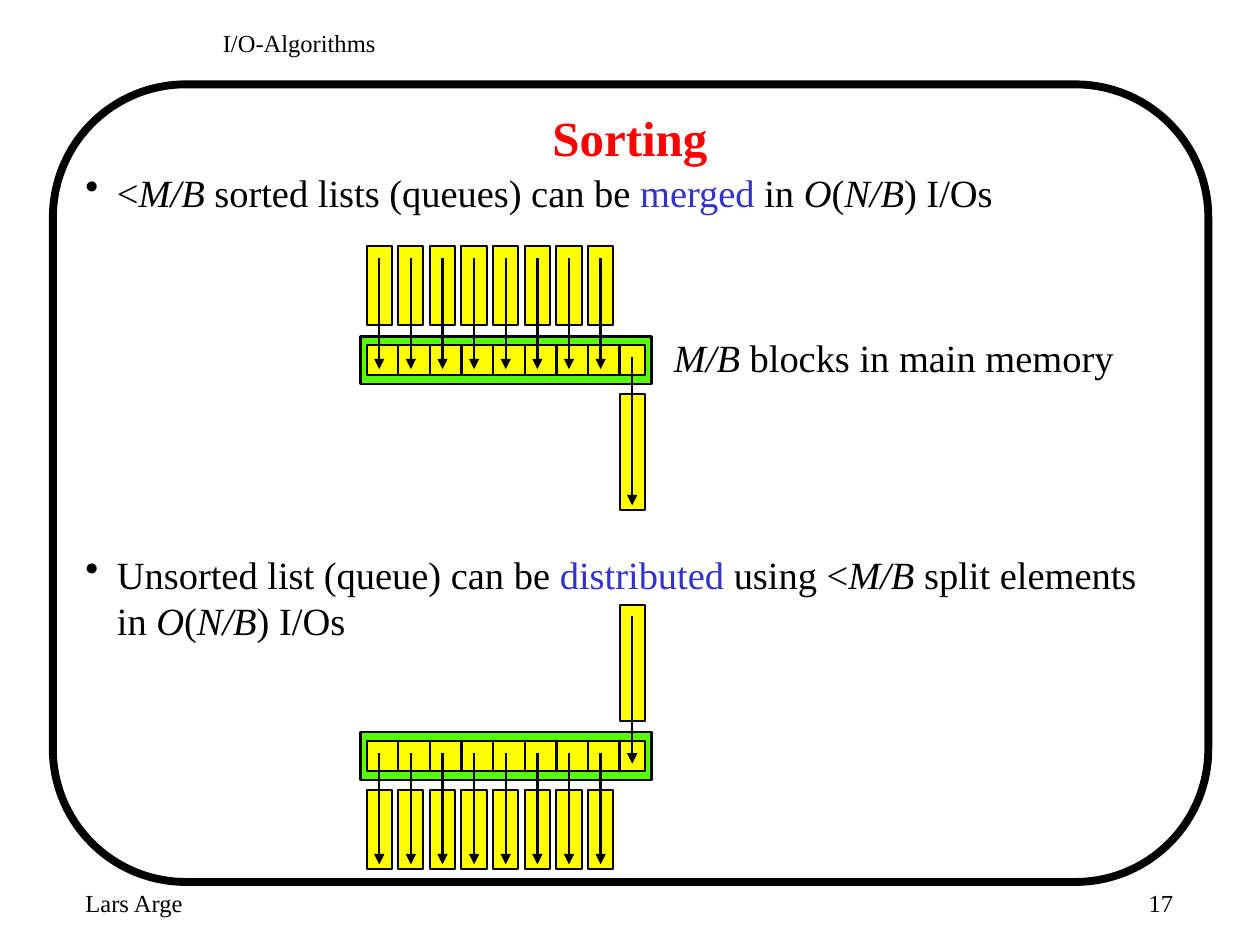
from pptx import Presentation
from pptx.dml.color import RGBColor
from pptx.enum.shapes import MSO_CONNECTOR, MSO_SHAPE
from pptx.enum.text import MSO_ANCHOR, PP_ALIGN
from pptx.oxml.ns import qn
from pptx.util import Inches, Pt
from lxml import etree

RECTANGLE = MSO_SHAPE.RECTANGLE
FRAME = MSO_SHAPE.FLOWCHART_ALTERNATE_PROCESS
STRAIGHT = MSO_CONNECTOR.STRAIGHT
LEFT, CENTER, RIGHT = PP_ALIGN.LEFT, PP_ALIGN.CENTER, PP_ALIGN.RIGHT
TOP, MIDDLE = MSO_ANCHOR.TOP, MSO_ANCHOR.MIDDLE

THEME = {
    "font": "Times New Roman",
    "black": RGBColor(0x00, 0x00, 0x00),
    "title": RGBColor(0xFF, 0x00, 0x00),
    "accent": RGBColor(0x33, 0x33, 0xCC),
    "memory": RGBColor(0x57, 0xFF, 0x03),
    "block": RGBColor(0xFF, 0xFF, 0x00),
    "title_size": 28, "body_size": 22, "small_size": 14,
    "frame_line": 4.5, "line": 1.38, "block_line": 1.13,
}

# Content: (text, place, alignment) and body spans as (text, style)
SMALL_TEXTS = [
    ("Lars Arge", (0.58, 7, 2.08, 0.5), LEFT),
    ("I/O-Algorithms", (1.67, 0.17, 6.58, 0.42), LEFT),
    ("17", (7.33, 7, 2.08, 0.5), RIGHT),
]
TITLE = "Sorting"
BODY = [
    {"bullet": True, "before": 4.4, "margin": 0.25, "spans": [
        ("<", ""), ("M/B", "italic"), (" sorted lists (queues) can be ", ""),
        ("merged", "accent"), (" in ", ""), ("O", "italic"), ("(", ""),
        ("N/B", "italic"), (") I/Os", "")]},
    {"bullet": False, "before": 68, "margin": 4.67, "spans": [
        ("M/B", "italic"), (" blocks in main memory", "")]},
    {"bullet": True, "before": 97.5, "margin": 0.25, "spans": [
        ("Unsorted list (queue) can be ", ""), ("distributed ", "accent"),
        ("using <", ""), ("M/B", "italic"), (" split elements in ", ""),
        ("O", "italic"), ("(", ""), ("N/B", "italic"), (") I/Os", "")]},
]
# Tops of the parts, and (start, end) heights of the arrows
MERGE = {"memory": 2.67, "queues": 1.95, "list": 3.13,
         "queue_arrow": (2.05, 2.93), "list_arrow": (2.83, 4.01)}
DISTRIBUTE = {"memory": 5.81, "queues": 6.27, "list": 4.8,
              "queue_arrow": (5.98, 6.86), "list_arrow": (4.89, 6.06)}

# Diagram grid
QUEUES = 8
FIRST_LEFT, PITCH, BLOCK_WIDTH = 2.91, 0.251, 0.2
QUEUE_HEIGHT, LIST_HEIGHT = 0.63, 0.92
BLOCKS_INSET, BLOCKS_HEIGHT = 0.07, 0.24


def add_box(shapes, kind, place, fill, width):
    box = shapes.add_shape(kind, *map(Inches, place))
    box.shadow.inherit = False
    if fill is None:
        box.fill.background()
    else:
        box.fill.solid()
        box.fill.fore_color.rgb = fill
    box.line.color.rgb = THEME["black"]
    box.line.width = Pt(width)


def add_vertical(shapes, x, start, end, arrow=False):
    line = shapes.add_connector(
        STRAIGHT, Inches(x), Inches(start), Inches(x), Inches(end))
    line.line.color.rgb = THEME["black"]
    line.line.width = Pt(THEME["line"])
    if arrow:
        etree.SubElement(line.line._get_or_add_ln(), qn("a:tailEnd"), type="triangle")
    etree.SubElement(line._element.spPr, qn("a:effectLst"))


def add_frame(page, place, anchor=TOP):
    frame = page.shapes.add_textbox(*map(Inches, place)).text_frame
    frame.word_wrap = True
    frame.vertical_anchor = anchor
    return frame


def style_paragraph(para, size, color, align=LEFT):
    para.alignment = align
    para.font.name = THEME["font"]
    para.font.size = Pt(size)
    para.font.color.rgb = color


def add_text(page, text, place, size, color, align, anchor=TOP, bold=False):
    para = add_frame(page, place, anchor).paragraphs[0]
    para.text = text
    style_paragraph(para, size, color, align)
    para.font.bold = bold


def add_body(page):
    frame = add_frame(page, (0.58, 1.29, 8.83, 5.42))
    for index, item in enumerate(BODY):
        para = frame.add_paragraph() if index else frame.paragraphs[0]
        style_paragraph(para, THEME["body_size"], THEME["black"])
        para.space_before = Pt(item["before"])
        properties = para._p.get_or_add_pPr()
        properties.set("marL", str(Inches(item["margin"])))
        if item["bullet"]:
            properties.set("indent", str(Inches(-0.25)))
            bullet = etree.Element(qn("a:buChar"), char="•")
            properties.find(qn("a:defRPr")).addprevious(bullet)
        for text, style in item["spans"]:
            span = para.add_run()
            span.text = text
            if style == "italic":
                span.font.italic = True
            elif style == "accent":
                span.font.color.rgb = THEME["accent"]


def add_diagram(shapes, tops):
    lefts = [FIRST_LEFT + PITCH * i for i in range(QUEUES + 1)]
    blocks_top = tops["memory"] + BLOCKS_INSET
    line_width = THEME["block_line"]

    # Main memory with its row of blocks
    add_box(shapes, RECTANGLE, (2.86, tops["memory"], 2.31, 0.38),
            THEME["memory"], THEME["line"])
    add_box(shapes, RECTANGLE, (FIRST_LEFT, blocks_top, 2.21, BLOCKS_HEIGHT),
            THEME["block"], line_width)

    # Short queues and the one long list
    for left in lefts[:-1]:
        add_box(shapes, RECTANGLE, (left, tops["queues"], BLOCK_WIDTH, QUEUE_HEIGHT),
                THEME["block"], line_width)
    add_box(shapes, RECTANGLE, (lefts[-1], tops["list"], BLOCK_WIDTH, LIST_HEIGHT),
            THEME["block"], line_width)

    # Block dividers, then arrows
    for left in lefts[1:]:
        add_vertical(shapes, left, blocks_top, blocks_top + BLOCKS_HEIGHT)
    for left in lefts:
        arrow = "list_arrow" if left == lefts[-1] else "queue_arrow"
        add_vertical(shapes, left + BLOCK_WIDTH / 2, *tops[arrow], arrow=True)


def main():
    deck = Presentation()
    deck.slide_width, deck.slide_height = Inches(10), Inches(7.5)
    page = deck.slides.add_slide(deck.slide_layouts[6])

    # Frame, header and footer
    add_box(page.shapes, FRAME, (0.42, 0.67, 9.17, 6.33), None, THEME["frame_line"])
    for text, place, align in SMALL_TEXTS:
        add_text(page, text, place, THEME["small_size"], THEME["black"], align)

    # Title and body
    add_text(page, TITLE, (0.75, 0.75, 8.5, 0.67), THEME["title_size"],
             THEME["title"], CENTER, MIDDLE, bold=True)
    add_body(page)

    # Diagrams
    add_diagram(page.shapes, MERGE)
    add_diagram(page.shapes.add_group_shape().shapes, DISTRIBUTE)

    deck.save("out.pptx")


if __name__ == "__main__":
    main()
